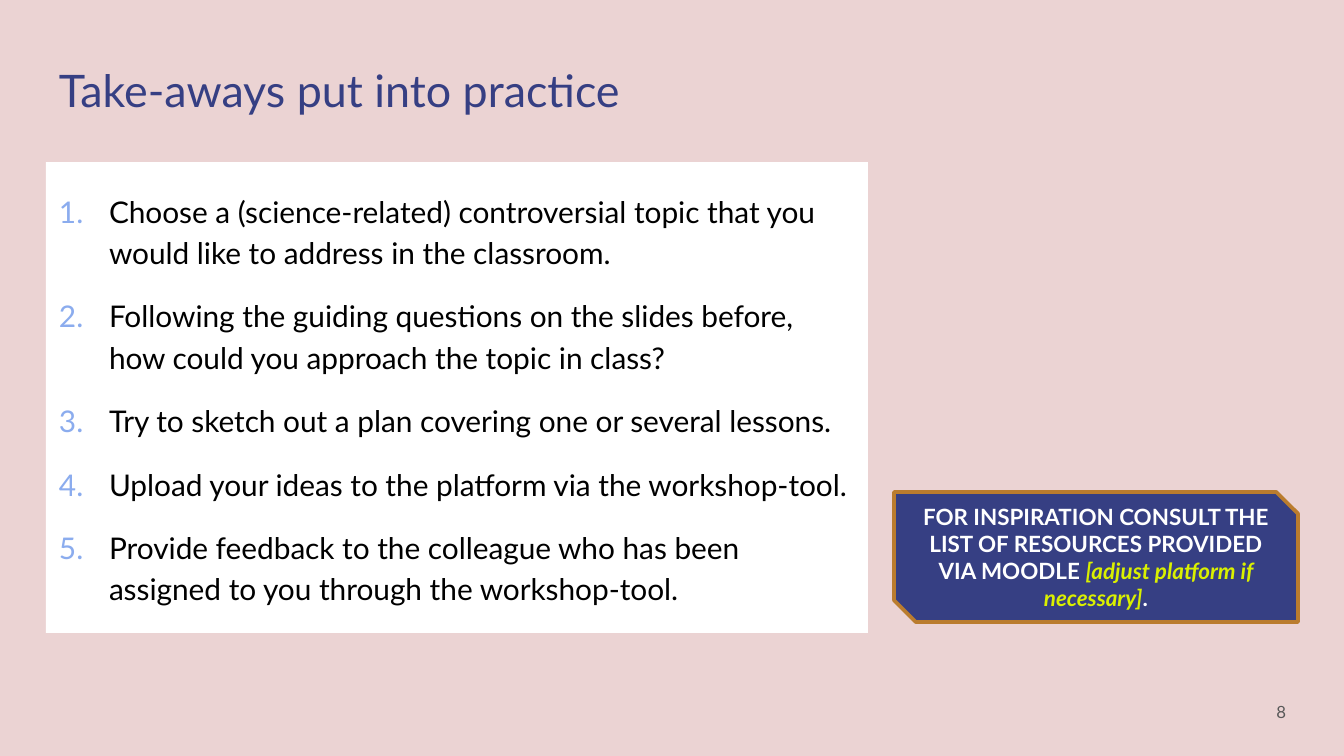
from dataclasses import dataclass
from typing import NamedTuple

from lxml import etree
from pptx import Presentation
from pptx import util as u
from pptx.dml.color import RGBColor
from pptx.enum import shapes, text
from pptx.oxml import ns

EMU_PER_PX = 914400 / 134.4


def px(length: int) -> u.Emu:
    return u.Emu(round(length * EMU_PER_PX))


@dataclass(frozen=True)
class Theme:
    font: str = "Lato"
    background: str = "EBD3D3"
    navy: str = "363F83"
    white: str = "FFFFFF"
    black: str = "000000"
    numeral: str = "8BACEE"
    grey: str = "595959"
    bronze: str = "BA7C2E"
    lime: str = "DAF000"
    title_size: int = 24
    step_size: int = 16
    callout_size: int = 12
    page_size: int = 9


class Box(NamedTuple):
    left: int
    top: int
    width: int
    height: int


class Phrase(NamedTuple):
    words: str
    highlighted: bool = False


THEME = Theme()
INSET = 13
STEP_INDENT = 50

TITLE_BOX = Box(46, 50, 1000, 85)
STEPS_BOX = Box(46, 162, 822, 471)
CALLOUT_BOX = Box(894, 492, 404, 130)
PAGE_BOX = Box(1218, 683, 81, 58)

STEPS = [
    "Choose a (science-related) controversial topic that you would like to address in the classroom.",
    "Following the guiding questions on the slides before, \vhow could you approach the topic in class?",
    "Try to sketch out a plan covering one or several lessons.",
    "Upload your ideas to the platform via the workshop-tool.",
    "Provide feedback to the colleague who has been assigned to you through the workshop-tool.",
]
CALLOUT = [
    Phrase("FOR INSPIRATION CONSULT THE LIST OF RESOURCES PROVIDED VIA MOODLE "),
    Phrase("[adjust platform if necessary]", highlighted=True),
    Phrase("."),
]


def rgb(colour: str) -> RGBColor:
    return RGBColor.from_string(colour)


def place(shape, box: Box) -> None:
    shape.left, shape.top, shape.width, shape.height = map(px, box)


def set_frame(frame, anchor, vertical_inset: int = INSET) -> None:
    frame.word_wrap = True
    frame.auto_size = text.MSO_AUTO_SIZE.NONE
    frame.vertical_anchor = anchor
    frame.margin_left = frame.margin_right = px(INSET)
    frame.margin_top = frame.margin_bottom = px(vertical_inset)


def set_type(paragraph, size: int, colour: str, align, bold: bool = False) -> None:
    paragraph.alignment = align
    paragraph.font.name = THEME.font
    paragraph.font.size = u.Pt(size)
    paragraph.font.bold = bold
    paragraph.font.color.rgb = rgb(colour)


def number(paragraph) -> None:
    properties = paragraph._p.get_or_add_pPr()
    properties.set("marL", str(px(STEP_INDENT)))
    properties.set("indent", str(-px(STEP_INDENT)))
    colour = etree.SubElement(properties, ns.qn("a:buClr"))
    etree.SubElement(colour, ns.qn("a:srgbClr"), val=THEME.numeral)
    etree.SubElement(properties, ns.qn("a:buFont"), typeface=THEME.font)
    etree.SubElement(properties, ns.qn("a:buAutoNum"), type="arabicPeriod")


def draw_title(title, words: str) -> None:
    place(title, TITLE_BOX)
    set_frame(title.text_frame, text.MSO_ANCHOR.TOP)
    title.text_frame.text = words
    set_type(title.text_frame.paragraphs[0], THEME.title_size, THEME.navy, text.PP_ALIGN.LEFT)


def draw_steps(body, steps: list[str]) -> None:
    place(body, STEPS_BOX)
    body.fill.solid()
    body.fill.fore_color.rgb = rgb(THEME.white)
    frame = body.text_frame
    set_frame(frame, text.MSO_ANCHOR.MIDDLE)
    for index, words in enumerate(steps):
        step = frame.add_paragraph() if index else frame.paragraphs[0]
        step.text = words
        number(step)
        step.line_spacing = 1.15
        step.space_before = u.Pt(12 if index else 0)
        set_type(step, THEME.step_size, THEME.black, text.PP_ALIGN.LEFT)


def draw_callout(slide, phrases: list[Phrase]) -> None:
    callout = slide.shapes.add_shape(
        shapes.MSO_SHAPE.SNIP_2_DIAG_RECTANGLE, *map(px, CALLOUT_BOX))
    callout.adjustments[0] = 0
    callout.adjustments[1] = 0.167
    callout.shadow.inherit = False
    callout.fill.solid()
    callout.fill.fore_color.rgb = rgb(THEME.navy)
    callout.line.color.rgb = rgb(THEME.bronze)
    callout.line.width = u.Pt(2)
    set_frame(callout.text_frame, text.MSO_ANCHOR.MIDDLE, vertical_inset=7)
    advice = callout.text_frame.paragraphs[0]
    set_type(advice, THEME.callout_size, THEME.white, text.PP_ALIGN.CENTER, bold=True)
    for phrase in phrases:
        run = advice.add_run()
        run.text = phrase.words
        if phrase.highlighted:
            run.font.italic = True
            run.font.color.rgb = rgb(THEME.lime)


def draw_page_number(slide, page: int) -> None:
    frame = slide.shapes.add_textbox(*map(px, PAGE_BOX)).text_frame
    set_frame(frame, text.MSO_ANCHOR.MIDDLE)
    frame.text = str(page)
    set_type(frame.paragraphs[0], THEME.page_size, THEME.grey, text.PP_ALIGN.RIGHT)


def main() -> None:
    deck = Presentation()
    deck.slide_width, deck.slide_height = px(1344), px(756)
    slide = deck.slides.add_slide(deck.slide_layouts[1])
    slide.background.fill.solid()
    slide.background.fill.fore_color.rgb = rgb(THEME.background)
    title, body = slide.placeholders
    draw_title(title, "Take-aways put into practice")
    draw_steps(body, STEPS)
    draw_page_number(slide, 8)
    draw_callout(slide, CALLOUT)
    deck.save("out.pptx")


if __name__ == "__main__":
    main()
